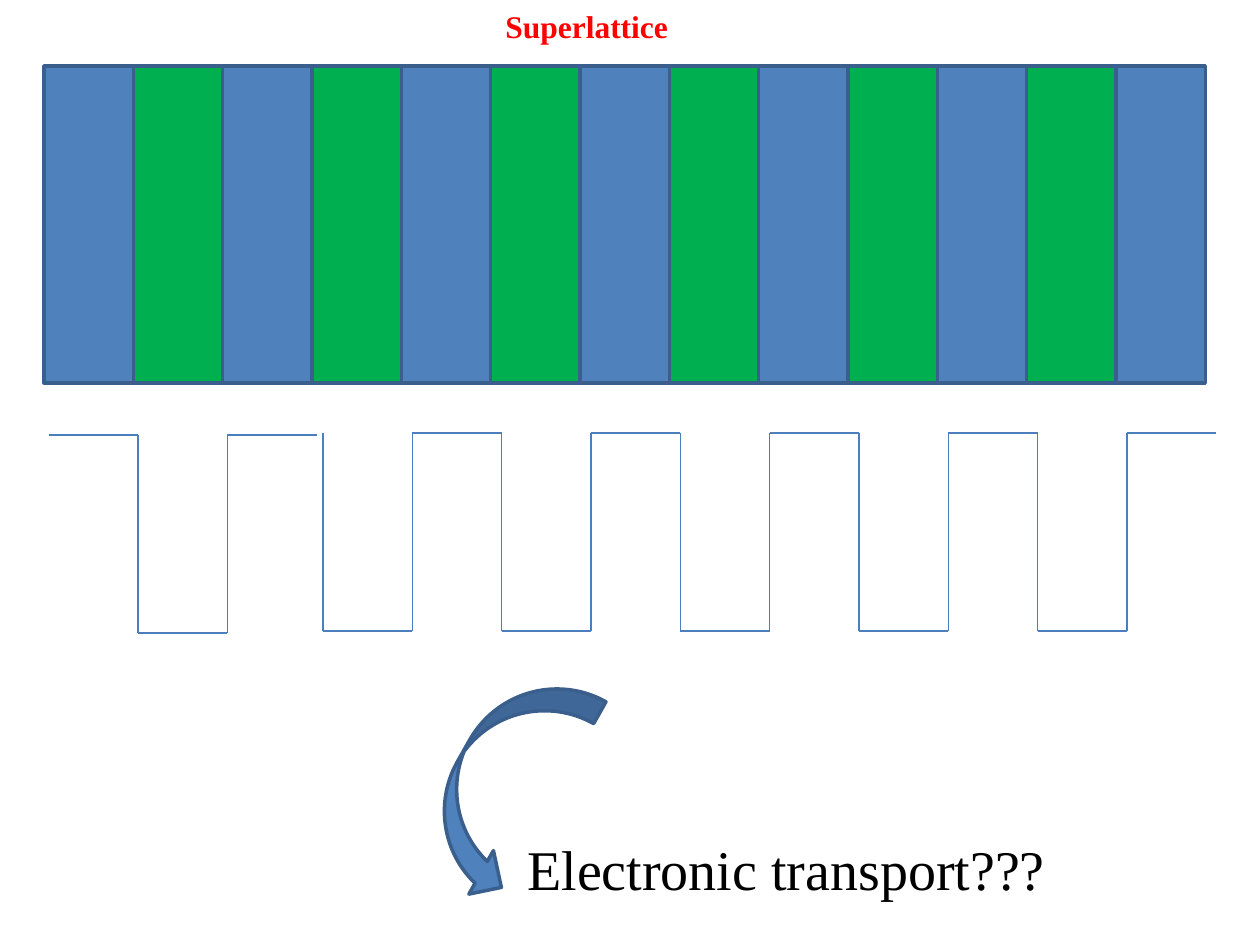
from lxml import etree
from pptx import Presentation
from pptx import util as u
from pptx.dml.color import RGBColor
from pptx.enum import shapes, text
from pptx.oxml.ns import qn

PX = 914400 / 126
BLUE = RGBColor(0x4F, 0x81, 0xBD)
GREEN = RGBColor(0x00, 0xB0, 0x50)
EDGE = RGBColor(0x3A, 0x5F, 0x8C)
WAVE = RGBColor(0x4B, 0x7E, 0xBC)
RED = RGBColor(0xFF, 0x00, 0x00)
BLACK = RGBColor(0x00, 0x00, 0x00)


def px(*values):
    return [u.Emu(round(v * PX)) for v in values]


def add_text(words, box, size, color, bold=False):
    tf = s.shapes.add_textbox(*px(*box)).text_frame
    tf.word_wrap = True
    tf.auto_size = text.MSO_AUTO_SIZE.SHAPE_TO_FIT_TEXT
    r = tf.paragraphs[0].add_run()
    r.text = words
    r.font.name = "Times New Roman"
    r.font.size = u.Pt(size)
    r.font.bold = bold
    r.font.color.rgb = color


prs = Presentation()
prs.slide_width, prs.slide_height = px(1260, 945)
s = prs.slides.add_slide(prs.slide_layouts[6])

# Layers of two alternating materials, then the curved arrow
LAYERS = 13
PITCH = 1072 / 12
RECT = shapes.MSO_SHAPE.RECTANGLE
solids = [(RECT, (44 + i * PITCH, 66, PITCH, 317), GREEN if i % 2 else BLUE, 0)
          for i in range(LAYERS)]
solids.append((shapes.MSO_SHAPE.CURVED_RIGHT_ARROW, (454, 662, 100, 238), BLUE, 29.4))
for kind, box, fill, turn in solids:
    sp = s.shapes.add_shape(kind, *px(*box))
    sp.rotation = turn
    sp.shadow.inherit = False
    sp.fill.solid()
    sp.fill.fore_color.rgb = fill
    sp.line.color.rgb = EDGE
    sp.line.width = u.Pt(2)

# Potential: one well on the left, then five joined wells
DEPTH = 198
lines = [(138, 435, 138 - PITCH, 435)]
wells = [(138, 435)] + [(323 + 2 * k * PITCH, 433) for k in range(5)]
for x, top in wells:
    right, bottom = x + PITCH, top + DEPTH
    lines += [(x, top, x, bottom),
              (right, top, right, bottom),
              (x, bottom, right, bottom),
              (right, top, right + PITCH, top)]
for ends in lines:
    c = s.shapes.add_connector(shapes.MSO_CONNECTOR.STRAIGHT, *px(*ends))
    c.line.color.rgb = WAVE
    c.line.width = u.Pt(0.75)
    etree.SubElement(c._element.spPr, qn("a:effectLst"))

# Title and question
add_text("Superlattice", (493, 1, 217, 50), 18, RED, bold=True)
add_text("Electronic transport???", (515, 828, 645, 81), 32, BLACK)

prs.save("out.pptx")
